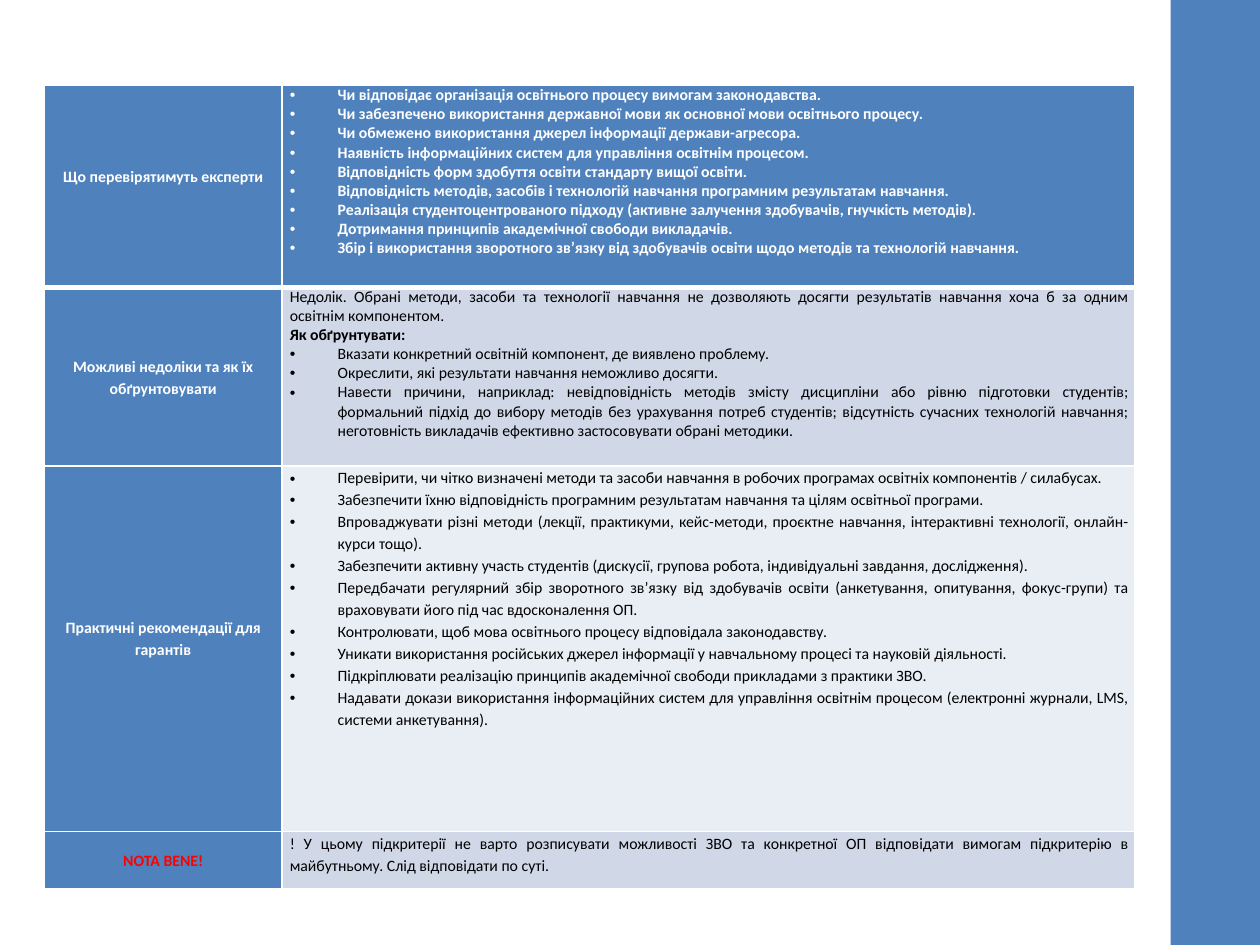
from dataclasses import dataclass

from lxml.etree import SubElement
from pptx import Presentation
from pptx.dml.color import RGBColor
from pptx.enum.shapes import MSO_SHAPE as Shape
from pptx.enum.text import MSO_ANCHOR as Anchor, PP_ALIGN as Align
from pptx.oxml.ns import qn
from pptx.util import Inches, Pt


@dataclass(frozen=True)
class Theme:
    blue: str = "4F81BD"
    band: str = "D0D8E8"
    pale: str = "E9EDF4"
    white: str = "FFFFFF"
    black: str = "000000"
    alert: str = "FF0000"
    font: str = "Calibri"
    size: float = 9
    spacing: float = 1.15


THEME = Theme()

# Paragraph styles
PLAIN, STRONG, BULLET = range(3)

COLUMNS = (1.89, 6.77)
CHECKS = [
    "Чи відповідає організація освітнього процесу вимогам законодавства.",
    "Чи забезпечено використання державної мови як основної мови освітнього процесу.",
    "Чи обмежено використання джерел інформації держави-агресора.",
    "Наявність інформаційних систем для управління освітнім процесом.",
    "Відповідність форм здобуття освіти стандарту вищої освіти.",
    "Відповідність методів, засобів і технологій навчання програмним результатам навчання.",
    "Реалізація студентоцентрованого підходу (активне залучення здобувачів, гнучкість методів).",
    "Дотримання принципів академічної свободи викладачів.",
    "Збір і використання зворотного зв’язку від здобувачів освіти щодо методів та технологій навчання.",
]
FLAWS = [
    "Вказати конкретний освітній компонент, де виявлено проблему.",
    "Окреслити, які результати навчання неможливо досягти.",
    "Навести причини, наприклад: невідповідність методів змісту дисципліни або рівню підготовки "
    "студентів; формальний підхід до вибору методів без урахування потреб студентів; відсутність "
    "сучасних технологій навчання; неготовність викладачів ефективно застосовувати обрані методики.",
]
ADVICE = [
    "Перевірити, чи чітко визначені методи та засоби навчання в робочих програмах освітніх "
    "компонентів / силабусах.",
    "Забезпечити їхню відповідність програмним результатам навчання та цілям освітньої програми.",
    "Впроваджувати різні методи (лекції, практикуми, кейс-методи, проєктне навчання, інтерактивні "
    "технології, онлайн-курси тощо).",
    "Забезпечити активну участь студентів (дискусії, групова робота, індивідуальні завдання, дослідження).",
    "Передбачати регулярний збір зворотного зв’язку від здобувачів освіти (анкетування, опитування, "
    "фокус-групи) та враховувати його під час вдосконалення ОП.",
    "Контролювати, щоб мова освітнього процесу відповідала законодавству.",
    "Уникати використання російських джерел інформації у навчальному процесі та науковій діяльності.",
    "Підкріплювати реалізацію принципів академічної свободи прикладами з практики ЗВО.",
    "Надавати докази використання інформаційних систем для управління освітнім процесом "
    "(електронні журнали, LMS, системи анкетування).",
]


@dataclass(frozen=True)
class Section:
    heading: str
    body: list
    height: float
    fill: str
    color: str = THEME.black
    heading_color: str = THEME.white
    heading_lift: float = 0  # bottom inset that raises the heading
    bold: bool = False
    spacing: float = 1


def bullets(lines):
    return [(line, BULLET) for line in lines]


SECTIONS = [
    Section("Що перевірятимуть експерти", bullets(CHECKS), 1.6, THEME.blue,
            color=THEME.white, heading_lift=0.17, bold=True),
    Section("Можливі недоліки та як їх обґрунтовувати",
            [("Недолік. Обрані методи, засоби та технології навчання не дозволяють досягти "
              "результатів навчання хоча б за одним освітнім компонентом.", PLAIN),
             ("Як обґрунтувати:", STRONG)] + bullets(FLAWS), 1.42, THEME.band),
    Section("Практичні рекомендації для гарантів", bullets(ADVICE), 2.9, THEME.pale,
            heading_lift=0.17, spacing=THEME.spacing),
    Section("NOTA BENE!",
            [("! У цьому підкритерії не варто розписувати можливості ЗВО та конкретної ОП "
              "відповідати вимогам підкритерію в майбутньому. Слід відповідати по суті.", PLAIN)],
            0.45, THEME.band, heading_color=THEME.alert, spacing=THEME.spacing),
]


def rgb(color):
    return RGBColor.from_string(color)


def add_bullet(paragraph):
    properties = paragraph._p.get_or_add_pPr()
    properties.set("marL", str(Inches(0.38)))
    properties.set("indent", str(-Inches(0.38)))
    SubElement(properties, qn("a:buFont"), typeface="Arial")
    SubElement(properties, qn("a:buChar"), char="•")


def write(cell, lines, align, color, bold, spacing):
    frame = cell.text_frame
    for index, (text, style) in enumerate(lines):
        paragraph = frame.add_paragraph() if index else frame.paragraphs[0]
        if style == BULLET:
            add_bullet(paragraph)
        paragraph.alignment = align
        paragraph.line_spacing = spacing
        run = paragraph.add_run()
        run.text = text
        run.font.name = THEME.font
        run.font.size = Pt(THEME.size)
        run.font.bold = bold or style == STRONG
        run.font.color.rgb = rgb(color)


def style_cell(cell, fill, top, bottom, lift=0):
    # Borders come before the fill in the cell properties
    properties = cell._tc.get_or_add_tcPr()
    for side, width in (("L", 1), ("R", 1), ("T", top), ("B", bottom)):
        line = SubElement(properties, qn(f"a:ln{side}"), w=str(Pt(width)))
        SubElement(SubElement(line, qn("a:solidFill")), qn("a:srgbClr"), val=THEME.white)
    cell.fill.solid()
    cell.fill.fore_color.rgb = rgb(fill)
    cell.margin_left = cell.margin_right = Inches(0.06)
    cell.margin_top = 0
    cell.margin_bottom = Inches(lift)


def add_side_band(slide, left, top, width, height):
    # The band is a flat bar turned upright about its centre
    band = slide.shapes.add_shape(
        Shape.RECTANGLE, Inches(left + (width - height) / 2),
        Inches(top + (height - width) / 2), Inches(height), Inches(width))
    band.rotation = 90
    band.shadow.inherit = False
    band.fill.solid()
    band.fill.fore_color.rgb = rgb(THEME.blue)
    band.line.fill.background()


def add_criteria_table(slide, left, top):
    height = sum(section.height for section in SECTIONS)
    table = slide.shapes.add_table(
        len(SECTIONS), len(COLUMNS), Inches(left), Inches(top),
        Inches(sum(COLUMNS)), Inches(height)).table
    for column, width in zip(table.columns, COLUMNS):
        column.width = Inches(width)
    for index, section in enumerate(SECTIONS):
        table.rows[index].height = Inches(section.height)
        heading, body = table.rows[index].cells
        # A thicker rule parts the first row from the rest
        top_rule = 3 if index == 1 else 1
        bottom_rule = 3 if index == 0 else 1
        style_cell(heading, THEME.blue, top_rule, bottom_rule, section.heading_lift)
        heading.vertical_anchor = Anchor.MIDDLE
        write(heading, [(section.heading, PLAIN)], Align.CENTER,
              section.heading_color, True, THEME.spacing)
        style_cell(body, section.fill, top_rule, bottom_rule)
        write(body, section.body, Align.JUSTIFY, section.color, section.bold, section.spacing)


def main():
    deck = Presentation()
    deck.slide_width, deck.slide_height = Inches(10), Inches(7.5)
    slide = deck.slides.add_slide(deck.slide_layouts[6])
    add_side_band(slide, 9.29, 0, 0.71, 7.5)
    add_criteria_table(slide, 0.35, 0.68)
    deck.save("out.pptx")


if __name__ == "__main__":
    main()
